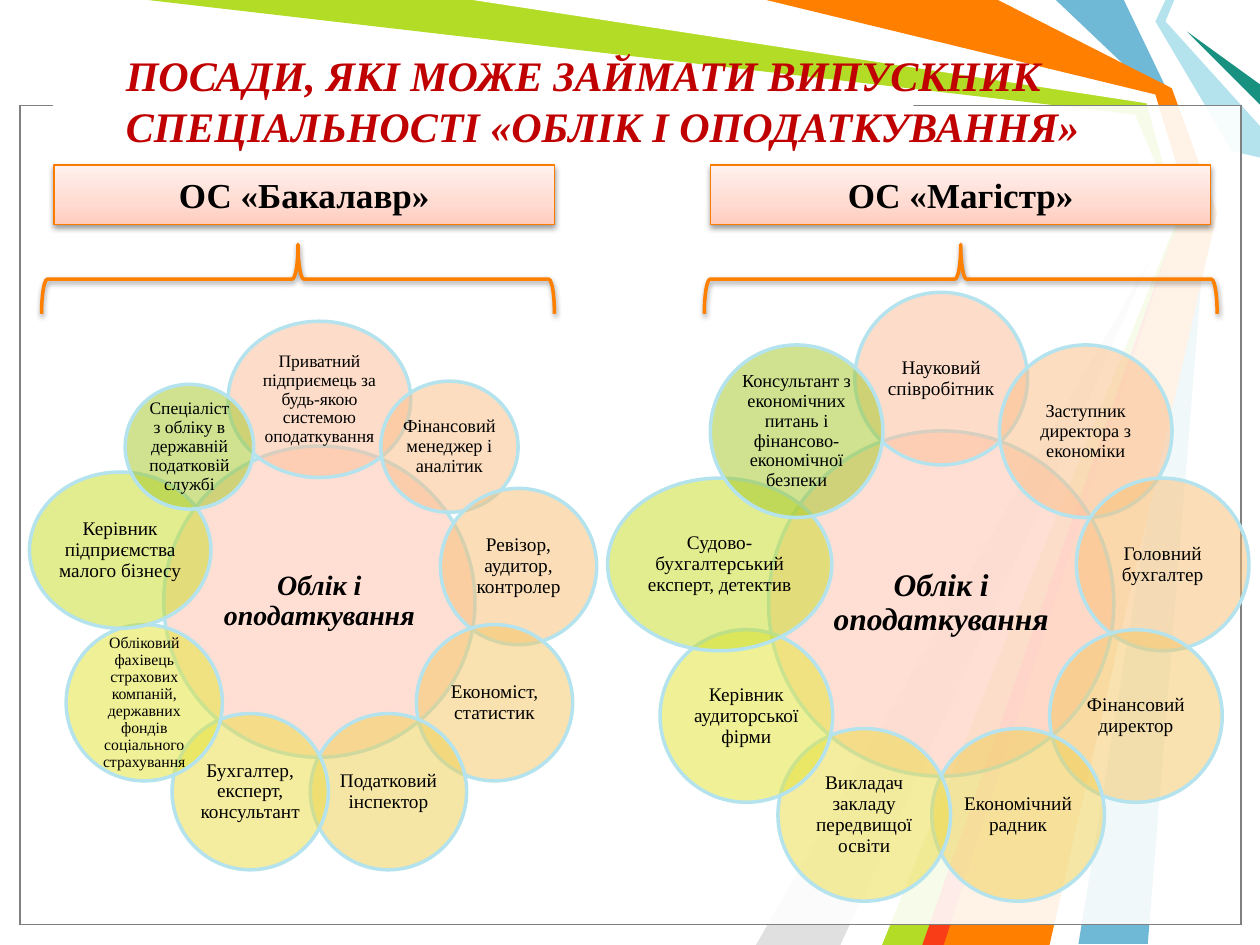
from copy import deepcopy
from math import cos, radians, sin

from lxml.etree import SubElement
from pptx import Presentation
from pptx.dml.color import RGBColor as Color
from pptx.enum.shapes import MSO_SHAPE as Preset
from pptx.enum.text import MSO_ANCHOR as Anchor, PP_ALIGN as Align
from pptx.oxml.ns import qn
from pptx.util import Inches, Pt

COLUMNS, ROWS = 1000, 750

COLORS = {
    "white": "FFFFFF", "black": "000000", "gray": "808080", "silver": "E0E0E0",
    "blue": "6FB9D7", "lime": "B3DC27", "ice": "B4E3EE", "teal": "189180",
    "orange": "FF7F00", "red": "F93D17", "crimson": "C00000", "amber": "F97C00",
    "core": "FFC0AA", "low": "FFCCBD", "middle": "FFDBD1", "high": "FFF1EE",
}
PETAL_COLORS = ["FDBC96", "FBBC83", "F8BF71", "F4C660", "EFCF4F",
                "EADA3F", "E3E42F", "C7DD21", "A2C722"]

RIBBONS = [
    ("blue", [(892, 0), (929, 77), (958, 167), (911, 749), (856, 749),
              (950, 167), (917, 75), (838, 0)]),
    ("lime", [(117, 0), (383, 0), (914, 78), (942, 169), (742, 750),
              (692, 750), (935, 173), (901, 91)]),
    ("silver", [(667, 750), (927, 181), (600, 750)]),
    ("white", [(375, 0), (910, 82), (932, 162), (675, 750), (700, 750),
               (941, 158), (917, 75), (600, 0)]),
    ("ice", [(925, 0), (917, 17), (978, 120), (1000, 125), (1000, 100),
             (925, 17), (932, 0)]),
    ("teal", [(1000, 83), (942, 25), (1000, 67)]),
    ("orange", [(608, 0), (792, 0), (930, 70), (966, 169), (833, 750),
                (733, 750), (942, 158), (917, 75)]),
    ("red", [(732, 750), (932, 183), (749, 750)]),
]

BACHELOR = [
    ("Приватний підприємець за будь-якою системою оподаткування", 10, 145, 124, 0),
    ("Фінансовий менеджер і аналітик", 10.5, 109, 104, 0),
    ("Ревізор, аудитор, контролер", 11, 124, 124, 0),
    ("Економіст, статистик", 11, 124, 124, 0),
    ("Податковий інспектор", 11, 124, 124, 0),
    ("Бухгалтер, експерт, консультант", 11, 124, 124, 0),
    ("Обліковий фахівець страхових компаній, державних фондів "
     "соціального страхування", 9, 124, 124, 0),
    ("Керівник підприємства малого бізнесу", 11, 144, 124, -13),
    ("Спеціаліст з обліку в державній податковій службі", 10, 102, 99, 0),
]
MASTER = [
    ("Науковий співробітник", 11, 137, 137, 0),
    ("Заступник директора з економіки", 10.5, 137, 137, 0),
    ("Головний бухгалтер", 11, 137, 137, 0),
    ("Фінансовий директор", 11, 137, 137, 0),
    ("Економічний радник", 11, 137, 137, 0),
    ("Викладач закладу передвищої освіти", 11, 137, 137, 0),
    ("Керівник аудиторської фірми", 11, 137, 137, 0),
    ("Судово-бухгалтерський експерт, детектив", 11, 178, 137, 0),
    ("Консультант з економічних питань і фінансово-економічної безпеки",
     10.5, 137, 137, 0),
]


def write(shape, text, size, color="black", bold=False, italic=False,
          align=Align.CENTER, insets=None, spacing=None, after=None):
    frame = shape.text_frame
    frame.word_wrap = True
    frame.vertical_anchor = Anchor.MIDDLE
    if insets:
        side, frame.margin_top, frame.margin_bottom = insets
        frame.margin_left = frame.margin_right = side
    para = frame.paragraphs[0]
    para.alignment = align
    if spacing:
        para.line_spacing = spacing
    if after:
        para.space_after = Pt(after)
    span = para.add_run()
    span.text = text
    span.font.name = "Times New Roman"
    span.font.size = Pt(size)
    span.font.bold = bold
    span.font.italic = italic
    span.font.color.rgb = Color.from_string(COLORS[color])


class PositionsSlide:
    def __init__(self, deck):
        self.page = deck.slides.add_slide(deck.slide_layouts[6])
        self.column = deck.slide_width // COLUMNS
        self.row = deck.slide_height // ROWS

    def place(self, left, top, width, height):
        return (round(left * self.column), round(top * self.row),
                round(width * self.column), round(height * self.row))

    def style(self, shape, fill=None, line=None, weight=0.75, opacity=None):
        shape.shadow.inherit = False
        if fill:
            shape.fill.solid()
            shape.fill.fore_color.rgb = Color.from_string(fill)
        else:
            shape.fill.background()
        if opacity:
            paint = shape.element.spPr.find(qn("a:solidFill"))[0]
            SubElement(paint, qn("a:alpha"), val=str(opacity * 1000))
        if line:
            shape.line.color.rgb = Color.from_string(COLORS[line])
            shape.line.width = Pt(weight)
        else:
            shape.line.fill.background()

    def shape(self, preset, area, **look):
        shape = self.page.shapes.add_shape(preset, *self.place(*area))
        self.style(shape, **look)
        return shape

    def ribbon(self, color, points):
        outline = self.page.shapes.build_freeform(
            *points[0], scale=(self.column, self.row))
        outline.add_line_segments(points[1:], close=True)
        self.style(outline.convert_to_shape(), fill=COLORS[color])

    def title(self, text, area):
        box = self.page.shapes.add_textbox(*self.place(*area))
        write(box, text, 24, color="crimson", bold=True, italic=True,
              align=Align.LEFT, insets=(10 * self.column, 0, 38 * self.row))

    def cast_shadow(self, shape):
        effects = shape.element.spPr.find(qn("a:effectLst"))
        shadow = SubElement(effects, qn("a:outerShdw"), blurRad="40000",
                            dist="20000", dir="5400000", rotWithShape="0")
        paint = SubElement(shadow, qn("a:srgbClr"), val=COLORS["black"])
        SubElement(paint, qn("a:alpha"), val="38000")

    def brace(self, center, middle, width, height):
        area = (center - height / 2, middle - width / 2, height, width)
        brace = self.shape(Preset.LEFT_BRACE, area, line="orange", weight=2)
        brace.rotation = 90
        self.cast_shadow(brace)

    def heading(self, text, area):
        box = self.shape(Preset.RECTANGLE, area, line="amber")
        box.fill.gradient()
        box.fill.gradient_angle = 90
        stops = box.element.spPr.find(qn("a:gradFill")).find(qn("a:gsLst"))
        stops.append(deepcopy(stops[-1]))
        shades = [(0, "low"), (0.35, "middle"), (1, "high")]
        for stop, (position, name) in zip(box.fill.gradient_stops, shades):
            stop.position = position
            stop.color.rgb = Color.from_string(COLORS[name])
        self.cast_shadow(box)
        write(box, text, 20, bold=True)

    def circle(self, text, size, center, middle, width, height, fill, **font):
        area = (center - width / 2, middle - height / 2, width, height)
        circle = self.shape(Preset.OVAL, area, fill=fill, opacity=50,
                            line="ice", weight=2)
        inset = (1 if size < 11 else 2) * self.column
        write(circle, text, size, insets=(inset, inset, inset), spacing=0.9,
              after=round(size * 0.35, 1), **font)

    def flower(self, center, middle, core, radius, size, petals):
        self.circle("Облік і оподаткування", size, center, middle, core, core,
                    COLORS["core"], bold=True, italic=True)
        for index, (text, points, width, height, drop) in enumerate(petals):
            angle = radians(index * 360 / len(petals))
            self.circle(text, points, center + radius * sin(angle),
                        middle - radius * cos(angle) + drop,
                        width, height, PETAL_COLORS[index])


def main():
    deck = Presentation()
    deck.slide_width, deck.slide_height = Inches(10), Inches(7.5)
    slide = PositionsSlide(deck)
    for color, points in RIBBONS:
        slide.ribbon(color, points)
    for line in ("black", "gray"):
        slide.shape(Preset.RECTANGLE, (16, 84, 969, 650),
                    fill=COLORS["white"], opacity=69, line=line)
    slide.shape(Preset.RECTANGLE, (42, 74, 683, 17), fill=COLORS["white"])
    slide.title("ПОСАДИ, ЯКІ МОЖЕ ЗАЙМАТИ ВИПУСКНИК СПЕЦІАЛЬНОСТІ "
                "«ОБЛІК І ОПОДАТКУВАННЯ»", (90, 36, 858, 125))
    slide.flower(253.5, 477.5, 247, 160.5, 16, BACHELOR)
    slide.flower(747, 479, 274, 178.5, 18, MASTER)
    for center in (236.5, 762.5):
        slide.brace(center, 221.5, 407, 55)
    for text, left in (("ОС «Бакалавр»", 43), ("ОС «Магістр»", 564)):
        slide.heading(text, (left, 131, 397, 47))
    deck.save("out.pptx")


if __name__ == "__main__":
    main()
